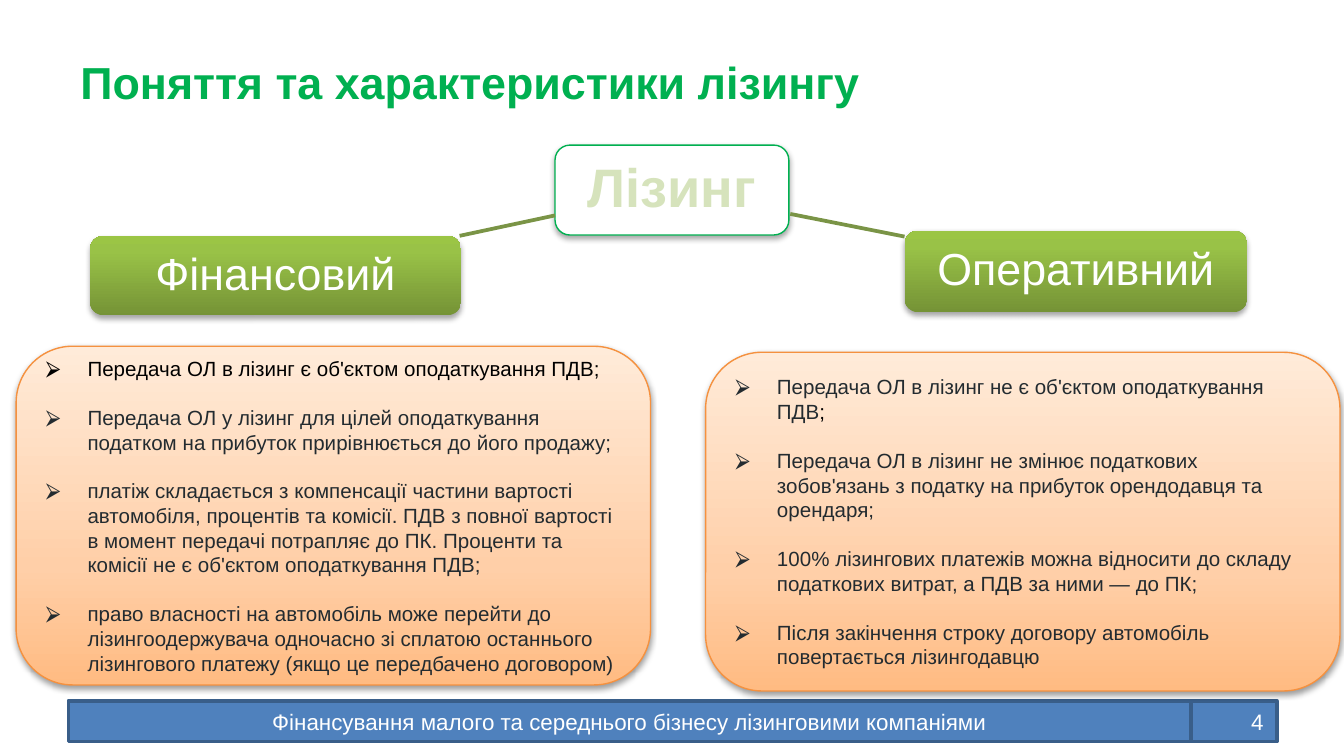
from lxml import etree
from pptx import Presentation
from pptx.dml.color import RGBColor
from pptx.enum.shapes import MSO_CONNECTOR as Connector, MSO_SHAPE as Shape
from pptx.enum.text import MSO_ANCHOR as Anchor, PP_ALIGN as Align
from pptx.oxml import parse_xml
from pptx.oxml.ns import nsdecls, qn
from pptx.util import Inches, Pt

PAGE_WIDTH = Inches(10)
PAGE_HEIGHT = PAGE_WIDTH * 9 // 16
FONT = "Arial"
COLORS = {
    "green": "00B050", "pale": "D6E3BC", "olive": "7A9446",
    "white": "FFFFFF", "black": "000000", "ink": "232B30",
    "blue": "4F81BD", "navy": "395E89", "orange": "F5913F",
}
GREEN_STOPS = [(0, "759336"), (80, "99C247"), (100, "9BC545")]
PEACH_STOPS = [(0, "FFBB82"), (35, "FFCFA8"), (100, "FFEBD9")]

FINANCIAL = [
    [("Передача ОЛ в лізинг є об'єктом оподаткування ПДВ;", "black")],
    [("Передача ОЛ у лізинг для цілей оподаткування податком на прибуток "
      "прирівнюється до його продажу;", "ink")],
    [("платіж складається з компенсації частини вартості автомобіля, процентів "
      "та комісії. ПДВ з повної вартості в момент передачі потрапляє до ПК. "
      "Проценти та комісії не є об'єктом оподаткування ПДВ;", "ink")],
    [("право власності на автомобіль може перейти до лізингоодержувача одночасно "
      "зі сплатою останнього лізингового платежу (якщо це передбачено "
      "договором)", "ink")],
]
OPERATING = [
    [("Передача ОЛ в лізинг не є об'єктом оподаткування ПДВ", "ink"),
     (";", "black")],
    [("Передача ОЛ в лізинг не змінює податкових зобов'язань з податку на "
      "прибуток орендодавця та орендаря;", "ink")],
    [("100% лізингових платежів можна відносити до складу податкових витрат, "
      "а ПДВ за ними — до ПК;", "ink")],
    [("Після закінчення строку договору автомобіль повертається "
      "лізингодавцю", "ink")],
]


def rgb(name):
    return RGBColor.from_string(COLORS[name])


def share(*percents):
    """Turn alternating x, y percents of the page into lengths."""
    sides = (PAGE_WIDTH, PAGE_HEIGHT)
    return [round(sides[i % 2] * p / 100) for i, p in enumerate(percents)]


def style_span(span, size, color, bold=False):
    span.font.name, span.font.size, span.font.bold = FONT, Pt(size), bold
    span.font.color.rgb = rgb(color)


def write_line(shape, text, size, color, align, bold=False, spacing=None):
    frame = shape.text_frame
    frame.word_wrap = True
    frame.vertical_anchor = Anchor.MIDDLE
    frame.text = text
    para = frame.paragraphs[0]
    para.alignment = align
    if spacing:
        para.line_spacing = spacing
    style_span(para.runs[0], size, color, bold)


def fill_gradient(shape, stops):
    shape.fill.gradient()
    gradient = shape.fill._xPr.find(qn("a:gradFill"))
    stop_list = gradient.find(qn("a:gsLst"))
    for stop in list(stop_list):
        stop_list.remove(stop)
    for position, color in stops:
        stop = etree.SubElement(stop_list, qn("a:gs"), pos=str(position * 1000))
        etree.SubElement(stop, qn("a:srgbClr"), val=color)
    shape.fill.gradient_angle = 90


def add_block(page, kind, box, fill, line=None, width=0.75, shadow=None):
    """Add a shape with a plain or gradient fill; shadow is its opacity."""
    shape = page.shapes.add_shape(kind, *share(*box))
    if isinstance(fill, list):
        fill_gradient(shape, fill)
    else:
        shape.fill.solid()
        shape.fill.fore_color.rgb = rgb(fill)
    if line:
        shape.line.color.rgb = rgb(line)
        shape.line.width = Pt(width)
    else:
        shape.line.fill.background()
    shape.shadow.inherit = False
    if shadow:
        shape._element.spPr.find(qn("a:effectLst")).append(parse_xml(
            f'<a:outerShdw {nsdecls("a")} blurRad="{Pt(3.1)}" dist="{Pt(1.7)}" '
            'dir="5400000" rotWithShape="0"><a:srgbClr val="000000">'
            f'<a:alpha val="{shadow * 1000}"/></a:srgbClr></a:outerShdw>'))
    return shape


def add_title(page, box):
    title = page.shapes.add_textbox(*share(*box))
    write_line(title, "Поняття та характеристики лізингу", 24, "green",
               Align.LEFT, bold=True)


def add_branch(page, ends):
    branch = page.shapes.add_connector(Connector.STRAIGHT, *share(*ends))
    branch.line.color.rgb = rgb("olive")
    branch.line.width = Pt(2)
    etree.SubElement(branch._element.spPr, qn("a:effectLst"))


def add_root(page, box):
    root = add_block(page, Shape.ROUNDED_RECTANGLE, box, "white", "green", shadow=35)
    write_line(root, "Лізинг", 29, "pale", Align.CENTER, bold=True, spacing=0.9)


def add_kind(page, box, name):
    kind = add_block(page, Shape.ROUNDED_RECTANGLE, box, GREEN_STOPS, shadow=35)
    write_line(kind, name, 24, "white", Align.CENTER, spacing=0.9)


def add_bullet(para, color):
    props = para._p.get_or_add_pPr()
    props.set("marL", str(Inches(0.31)))
    props.set("indent", str(-Inches(0.31)))
    bullet_color = etree.SubElement(props, qn("a:buClr"))
    etree.SubElement(bullet_color, qn("a:srgbClr"), val=COLORS[color])
    etree.SubElement(props, qn("a:buFont"), typeface=FONT)
    etree.SubElement(props, qn("a:buChar"), char="⮚")


def add_panel(page, box, items):
    panel = add_block(page, Shape.ROUNDED_RECTANGLE, box, PEACH_STOPS, "orange",
                      shadow=38)
    frame = panel.text_frame
    frame.word_wrap = True
    frame.vertical_anchor = Anchor.MIDDLE
    for number, item in enumerate(items):
        para = frame.add_paragraph() if number else frame.paragraphs[0]
        add_bullet(para, item[0][1])
        para.alignment = Align.LEFT
        if number:
            para.space_before = Pt(13)
        for text, color in item:
            span = para.add_run()
            span.text = text
            style_span(span, 11, color)


def add_footer(page, box, number_width):
    left, top, width, height = box
    split = width - number_width
    cells = [
        (left, split, Align.CENTER,
         "Фінансування малого та середнього бізнесу лізинговими компаніями"),
        (left + split, number_width, Align.RIGHT, "4"),
    ]
    for x, cell_width, align, text in cells:
        cell = add_block(page, Shape.RECTANGLE, (x, top, cell_width, height),
                         "blue", "navy", 2)
        write_line(cell, text, 12, "white", align)


def main():
    deck = Presentation()
    deck.slide_width, deck.slide_height = PAGE_WIDTH, PAGE_HEIGHT
    page = deck.slides.add_slide(deck.slide_layouts[6])

    add_title(page, (5, 2.5, 78.1, 16.7))

    # Tree of leasing kinds
    add_root(page, (41.3, 19.2, 17.4, 11.9))
    add_branch(page, (41.3, 28.5, 34.2, 31.2))
    add_kind(page, (6.7, 31.2, 27.6, 10.5), "Фінансовий")
    add_branch(page, (58.8, 28.3, 67.3, 31.3))
    add_kind(page, (67.3, 30.5, 25.5, 10.8), "Оперативний")

    add_footer(page, (5.1, 92.7, 89.9, 5.4), 6.4)

    # Features of each kind
    add_panel(page, (1.2, 45.8, 47.2, 44.8), FINANCIAL)
    add_panel(page, (52.5, 46.6, 47.2, 44.8), OPERATING)

    deck.save("out.pptx")


if __name__ == "__main__":
    main()
